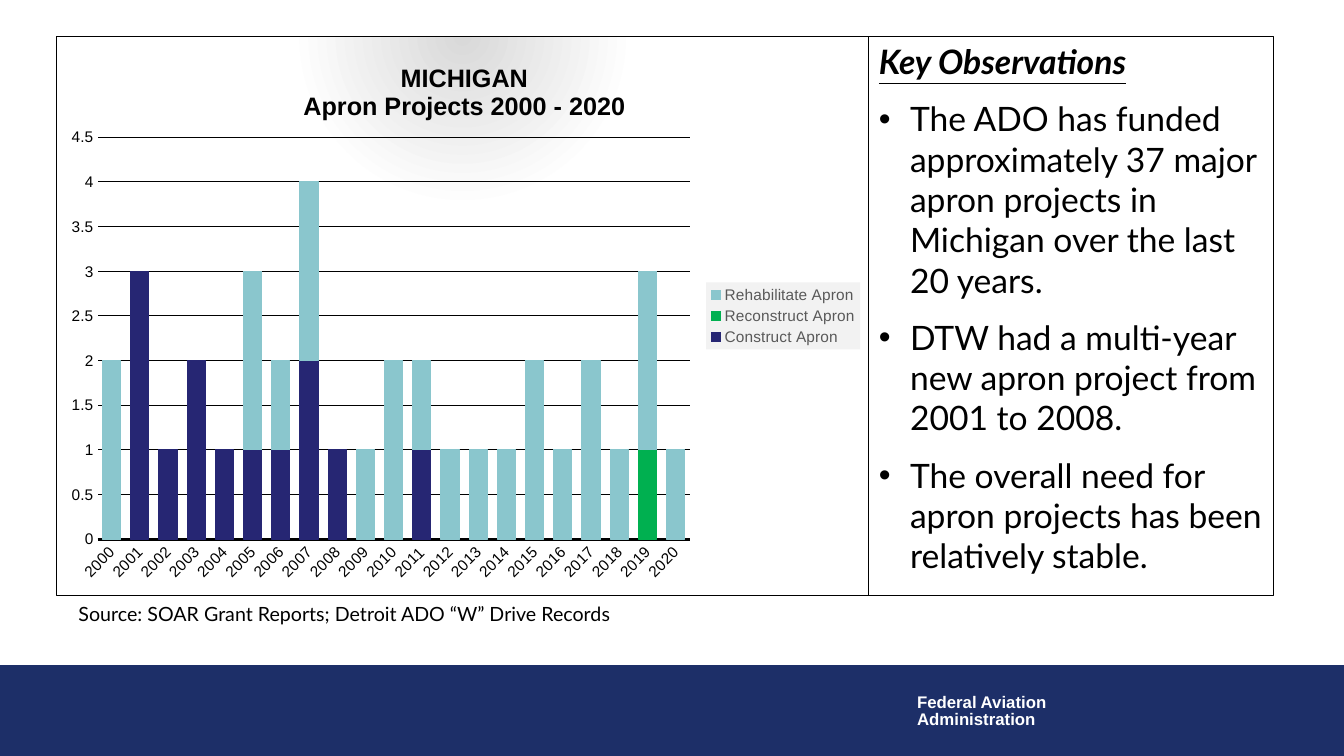
from lxml import etree
from pptx import Presentation
from pptx.chart.data import CategoryChartData
from pptx.dml.color import RGBColor
from pptx.enum.chart import XL_CHART_TYPE as ChartType, XL_LEGEND_POSITION as LegendPos, XL_TICK_MARK as Tick
from pptx.enum.shapes import MSO_SHAPE as Shape
from pptx.enum.text import MSO_ANCHOR as Anchor, PP_ALIGN as Align
from pptx.oxml import parse_xml
from pptx.oxml.ns import nsdecls, qn
from pptx.util import Inches, Pt

prs = Presentation()
prs.slide_width, prs.slide_height = Inches(13.33), Inches(7.5)
W, H = prs.slide_width, prs.slide_height
s = prs.slides.add_slide(prs.slide_layouts[6])
rgb = RGBColor.from_string

# Columns and rows as shares of the slide
LEFT, SPLIT, RIGHT = W * 0.042, W * 0.6465, W * 0.9475
TOP, BOTTOM, BAND = H * 0.048, H * 0.788, H * 0.88


def style(font, size, color, name, bold=False):
    font.size, font.name, font.bold = Pt(size), name, bold
    font.color.rgb = rgb(color)


def place(part, index, **shares):
    """Give a chart part a manual layout, as shares of the chart area."""
    old = part.find(qn("c:layout"))
    if old is not None:
        part.remove(old)
    layout = parse_xml(f'<c:layout {nsdecls("c")}><c:manualLayout/></c:layout>')
    manual = layout[0]
    if index == 0:
        etree.SubElement(manual, qn("c:layoutTarget")).set("val", "inner")
    for key in ("x", "y"):
        etree.SubElement(manual, qn(f"c:{key}Mode")).set("val", "edge")
    for key, share in shares.items():
        etree.SubElement(manual, qn(f"c:{key}")).set("val", str(share))
    part.insert(index, layout)


# Footer band
band = s.shapes.add_shape(Shape.RECTANGLE, 0, int(BAND), W, int(H - BAND))
band.shadow.inherit = False
band.fill.solid()
band.fill.fore_color.rgb = band.line.color.rgb = rgb("1D2F68")
band.line.width = Pt(0.75)

agency = s.shapes.add_textbox(int(W * 0.675), int(H * 0.913), int(W * 0.113), int(H * 0.059))
tf = agency.text_frame
tf.word_wrap = False
tf.text = "Federal Aviation\nAdministration"
for p in tf.paragraphs:
    p.line_spacing = 0.85
    style(p.runs[0].font, 12, "FFFFFF", "Arial", True)

source = s.shapes.add_textbox(int(W * 0.051), int(H * 0.789), int(W * 0.543), int(H * 0.045))
tf = source.text_frame
tf.word_wrap = True
tf.text = "Source: SOAR Grant Reports; Detroit ADO “W” Drive Records"
style(tf.paragraphs[0].runs[0].font, 14, "000000", "Lato")

# Observations
panel = s.shapes.add_shape(Shape.RECTANGLE, int(SPLIT), int(TOP), int(RIGHT - SPLIT), int(BOTTOM - TOP))
panel.shadow.inherit = False
panel.fill.background()
panel.line.color.rgb = rgb("000000")
panel.line.width = Pt(0.75)
tf = panel.text_frame
tf.word_wrap = True
tf.vertical_anchor = Anchor.TOP
tf.text = "\n".join([
    "Key Observations",
    "The ADO has funded approximately 37 major apron projects in Michigan over the last 20 years.",
    "DTW had a multi-year new apron project from 2001 to 2008.",
    "The overall need for apron projects has been relatively stable.",
])
for i, p in enumerate(tf.paragraphs):
    p.alignment = Align.LEFT
    font = p.runs[0].font
    style(font, 24, "000000", "Lato", i == 0)
    if i == 0:
        font.italic = font.underline = True
    else:
        p.space_before = Pt(12)
        pPr = p._p.get_or_add_pPr()
        pPr.set("marL", str(Inches(0.31)))
        pPr.set("indent", str(Inches(-0.31)))
        etree.SubElement(pPr, qn("a:buFont")).set("typeface", "Arial")
        etree.SubElement(pPr, qn("a:buChar")).set("char", "•")

# Apron projects by year
years = range(2000, 2021)
projects = [
    ("Construct Apron", "262673",
     {2001: 3, 2002: 1, 2003: 2, 2004: 1, 2005: 1, 2006: 1, 2007: 2, 2008: 1, 2011: 1}),
    ("Reconstruct Apron", "00B050", {2019: 1}),
    ("Rehabilitate Apron", "8AC6CD",
     {2000: 2, 2005: 2, 2006: 1, 2007: 2, 2009: 1, 2010: 2, 2011: 1, 2012: 1, 2013: 1,
      2014: 1, 2015: 2, 2016: 1, 2017: 2, 2018: 1, 2019: 2, 2020: 1}),
]
data = CategoryChartData()
data.categories = [str(year) for year in years]
for name, color, counts in projects:
    data.add_series(name, [counts.get(year) for year in years])
chart = s.shapes.add_chart(ChartType.COLUMN_STACKED, int(LEFT), int(TOP),
                           int(SPLIT - LEFT), int(BOTTOM - TOP), data).chart
style(chart.font, 10, "000000", "Arial")

plot = chart.plots[0]
plot.gap_width, plot.overlap, plot.vary_by_categories = 55, 100, False
for series, (name, color, counts) in zip(plot.series, projects):
    series.format.fill.solid()
    series.format.fill.fore_color.rgb = series.format.line.color.rgb = rgb(color)
    series.format.line.width = Pt(0.75)

tf = chart.chart_title.text_frame
tf.text = "MICHIGAN\nApron Projects 2000 - 2020"
for p in tf.paragraphs:
    style(p.runs[0].font, 18, "000000", "Arial", True)

cat, val = chart.category_axis, chart.value_axis
for axis in (cat, val):
    axis.major_tick_mark = axis.minor_tick_mark = Tick.NONE
    style(axis.tick_labels.font, 11, "000000", "Arial")
cat.format.line.color.rgb = rgb("000000")
cat.format.line.width = Pt(2)
cat._element.find(qn("c:txPr")).find(qn("a:bodyPr")).set("rot", "-2700000")
val.minimum_scale, val.maximum_scale, val.major_unit = 0, 4.5, 0.5
val.format.line.fill.background()
val.major_gridlines.format.line.color.rgb = rgb("000000")
val.major_gridlines.format.line.width = Pt(0.75)

chart.has_legend = True
legend = chart.legend
legend.position, legend.include_in_layout = LegendPos.RIGHT, False
style(legend.font, 11, "595959", "Arial")
legend._element.find(qn("c:txPr")).addprevious(parse_xml(
    f'<c:spPr {nsdecls("c", "a")}><a:solidFill><a:srgbClr val="F2F2F2"/></a:solidFill></c:spPr>'))

root = chart._chartSpace.find(qn("c:chart"))
place(root.find(qn("c:plotArea")), 0, x=0.05, y=0.18, w=0.73, h=0.72)
place(chart.chart_title._element, 1, x=0.3, y=0.04)
place(legend._element, 1, x=0.8, y=0.44, w=0.19, h=0.12)

stops = "".join(f'<a:gs pos="{pos}000"><a:srgbClr val="{color}"/></a:gs>'
                for pos, color in [(0, "D9D9D9"), (35, "FFFFFF"), (100, "FFFFFF")])
root.addnext(parse_xml(
    f'<c:spPr {nsdecls("c", "a")}><a:gradFill><a:gsLst>{stops}</a:gsLst><a:path path="circle">'
    '<a:fillToRect l="50000" t="-80000" r="50000" b="180000"/></a:path></a:gradFill>'
    '<a:ln w="9525"><a:solidFill><a:srgbClr val="000000"/></a:solidFill></a:ln></c:spPr>'))

prs.save("out.pptx")
